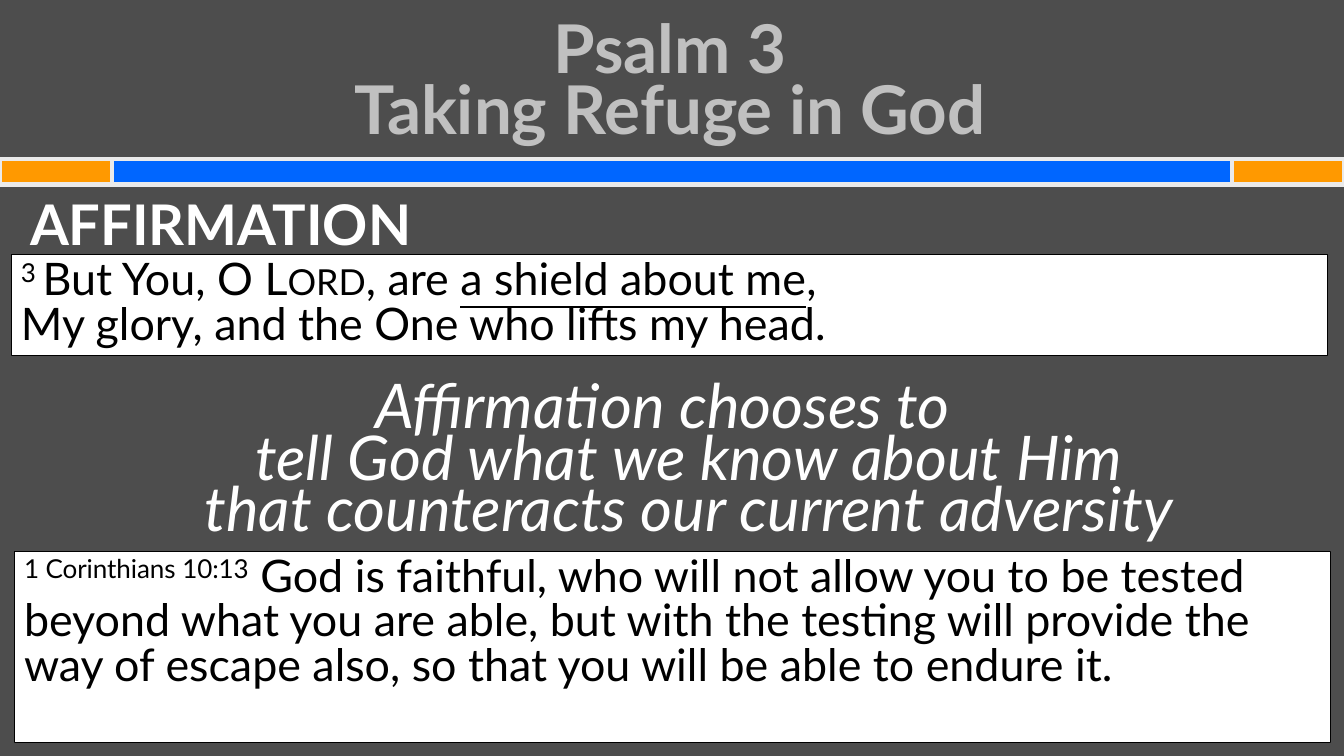
from pptx import Presentation
from pptx.dml.color import RGBColor
from pptx.enum.shapes import MSO_SHAPE
from pptx.enum.text import MSO_ANCHOR, PP_ALIGN
from pptx.util import Inches, Pt

THEME = {
    "font": "Lato",
    "background": RGBColor.from_string("4D4D4D"),
    "blue": RGBColor.from_string("0066FF"),
    "orange": RGBColor.from_string("FF9900"),
    "bar_line": RGBColor.from_string("EAEAEA"),
    "title": RGBColor.from_string("C0C0C0"),
    "white": RGBColor.from_string("FFFFFF"),
    "black": RGBColor.from_string("000000"),
    "title_size": Pt(48),
    "heading_size": Pt(40),
    "statement_size": Pt(44),
    "verse_size": Pt(32),
}


def add_box(slide, position, fill, line, line_width):
    shape = slide.shapes.add_shape(MSO_SHAPE.RECTANGLE, *map(Inches, position))
    shape.shadow.inherit = False
    shape.fill.solid()
    shape.fill.fore_color.rgb = fill
    shape.line.color.rgb = line
    shape.line.width = Pt(line_width)
    return shape


def format_runs(paragraph, color, formats):
    for run in paragraph.runs:
        run.font.color.rgb = color
        for name, value in {"name": THEME["font"], **formats}.items():
            setattr(run.font, name, value)


presentation = Presentation()
presentation.slide_width = Inches(13.33)
presentation.slide_height = Inches(7.5)
slide = presentation.slides.add_slide(presentation.slide_layouts[6])
slide.background.fill.solid()
slide.background.fill.fore_color.rgb = THEME["background"]

for left, width, color in [(0, 13.33, "blue"), (0, 1.11, "orange"), (12.22, 1.11, "orange")]:
    add_box(slide, (left, 1.58, width, 0.25), THEME[color], THEME["bar_line"], 3)

texts = [
    ("Psalm 3\vTaking Refuge in God", 0.3, 1.12, MSO_ANCHOR.MIDDLE, False, THEME["title"],
     {"alignment": PP_ALIGN.CENTER, "line_spacing": Pt(44)},
     {"size": THEME["title_size"], "bold": True}),
    ("AFFIRMATION", 2.01, 0.5, MSO_ANCHOR.TOP, True, THEME["white"],
     {"alignment": PP_ALIGN.LEFT, "line_spacing": 0.7},
     {"size": THEME["heading_size"], "bold": True}),
    ("Affirmation chooses to \vtell God what we know about Him\vthat counteracts our current adversity",
     3.79, 1.65, MSO_ANCHOR.TOP, True, THEME["white"],
     {"alignment": PP_ALIGN.CENTER, "line_spacing": 0.7},
     {"size": THEME["statement_size"], "italic": True}),
]
for text, top, height, anchor, hanging, color, paragraph_formats, font_formats in texts:
    text_box = slide.shapes.add_textbox(Inches(0.2), Inches(top), Inches(12.89), Inches(height))
    text_box.text_frame.word_wrap = True
    text_box.text_frame.vertical_anchor = anchor
    paragraph = text_box.text_frame.paragraphs[0]
    paragraph.text = text
    for name, value in paragraph_formats.items():
        setattr(paragraph, name, value)
    if hanging:
        properties = paragraph._p.get_or_add_pPr()
        properties.set("marL", str(Inches(0.38)))
        properties.set("indent", str(-Inches(0.38)))
    format_runs(paragraph, color, font_formats)

superscript = {"baseline": "30000"}
verses = [
    ((0.11, 2.53, 13.06, 1), [
        [("3 ", superscript), ("But You, O ", {}), ("Lord", {"cap": "small"}), (", are ", {}),
         ("a shield about me", {"u": "sng"}), (",", {})],
        [("My glory, and the One who lifts my head.", {})],
    ]),
    ((0.14, 5.47, 13.06, 1.9), [
        [("1 Corinthians 10:13", superscript),
         (" God is faithful, who will not allow you to be tested beyond what you are able, "
          "but with the testing will provide the way of escape also, "
          "so that you will be able to endure it.", {})],
    ]),
]
for position, lines in verses:
    verse_box = add_box(slide, position, THEME["white"], THEME["black"], 0.75)
    frame = verse_box.text_frame
    frame.word_wrap = True
    frame.vertical_anchor = MSO_ANCHOR.TOP
    for index, line in enumerate(lines):
        paragraph = frame.add_paragraph() if index else frame.paragraphs[0]
        paragraph.alignment = PP_ALIGN.LEFT
        paragraph.line_spacing = Pt(32)
        for text, attributes in line:
            run = paragraph.add_run()
            run.text = text
            for name, value in attributes.items():
                run._r.get_or_add_rPr().set(name, value)
        format_runs(paragraph, THEME["black"], {"size": THEME["verse_size"]})

presentation.save("out.pptx")
